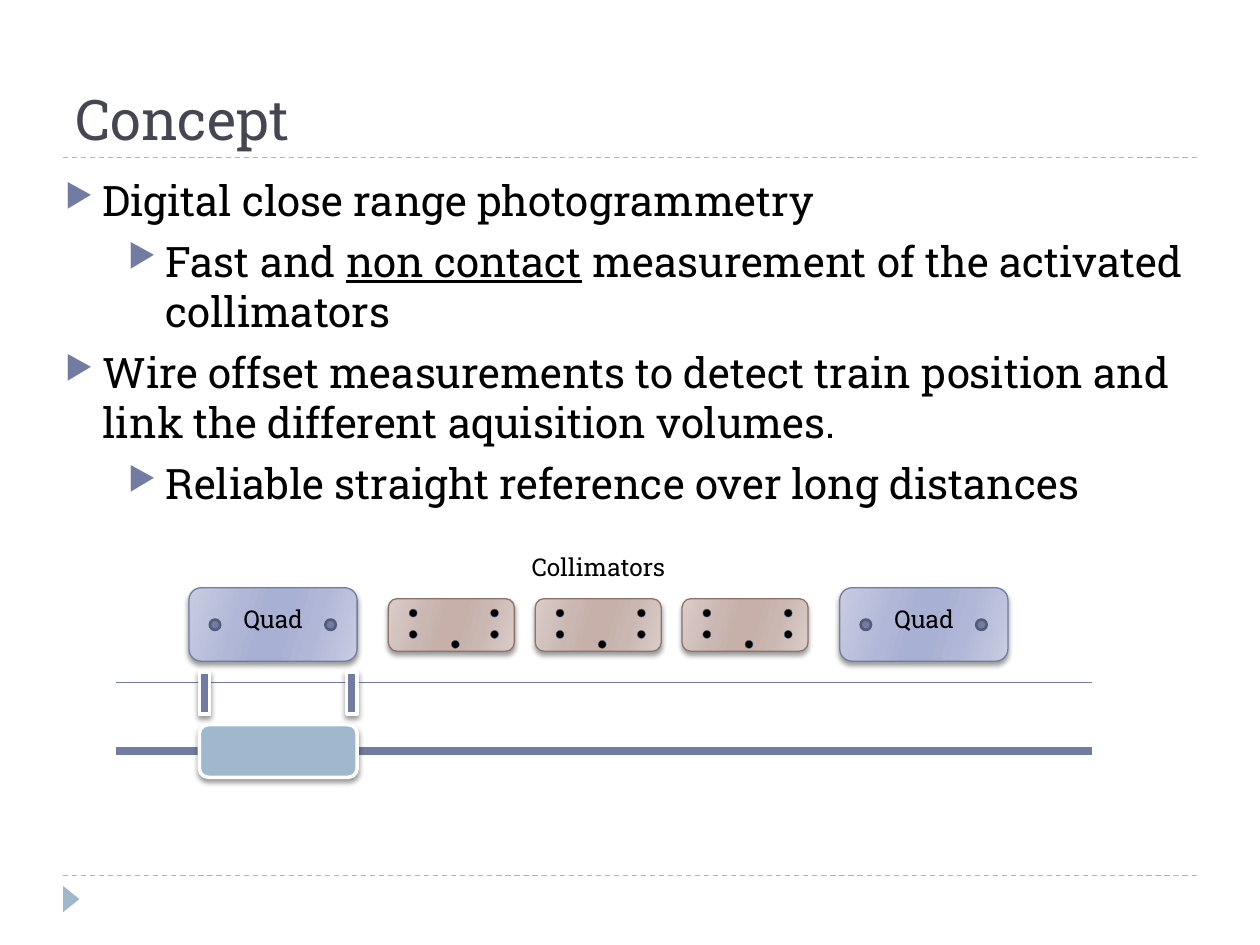
from dataclasses import dataclass

from lxml.etree import SubElement
from pptx import Presentation
from pptx.dml.color import RGBColor
from pptx.enum.dml import MSO_LINE as Dash
from pptx.enum.shapes import MSO_CONNECTOR as Link, MSO_SHAPE as Kind
from pptx.enum.text import MSO_ANCHOR as Anchor, PP_ALIGN as Align
from pptx.oxml.ns import qn
from pptx.util import Cm, Pt


@dataclass(frozen=True)
class Theme:
    font: str = "Roboto Slab"
    title: str = "464653"
    ink: str = "000000"
    blue: str = "727CA3"
    navy: str = "545C79"
    pale: str = "9FB8CD"
    white: str = "FFFFFF"
    brown: str = "8E736A"
    rose: tuple = ("DACDCA", "CBB7B2", "C6B0A9")
    lilac: tuple = ("C9CDE2", "B1B7D7", "A8B0D3")
    head: int = 32
    body: int = 24
    note: int = 14


T = Theme()
BODY = [
    (0, ["Digital close range photogrammetry"]),
    (1, ["Fast and ", "non contact", " measurement of the activated collimators"]),
    (0, ["Wire offset measurements to detect train position and "
         "link the different aquisition volumes."]),
    (1, ["Reliable straight reference over long distances"]),
]


def rgb(code):
    return RGBColor.from_string(code)


def node(parent, tag, **attrs):
    return SubElement(parent, qn(tag), {k: str(v) for k, v in attrs.items()})


def blend(fill, tones):
    fill.gradient()
    fill.gradient_angle = -16
    stops = fill._fill._gradFill.find(qn("a:gsLst"))
    for old in list(stops):
        stops.remove(old)
    edge, mid, core = tones
    for spot, tone in zip((0, 30, 45, 55, 73, 100), (edge, mid, core, core, mid, edge)):
        node(node(stops, "a:gs", pos=spot * 1000), "a:srgbClr", val=tone)


def shade(shape):
    glow = node(shape._element.spPr.find(qn("a:effectLst")), "a:outerShdw",
                blurRad=Pt(3), dist=Pt(2), dir=5400000, rotWithShape=0)
    node(node(glow, "a:srgbClr", val=T.ink), "a:alpha", val=40000)


def add_form(shapes, kind, box, fill, line=None, width=0.75, raised=False):
    shape = shapes.add_shape(kind, *map(Cm, box))
    shape.shadow.inherit = False
    if isinstance(fill, tuple):
        blend(shape.fill, fill)
    else:
        shape.fill.solid()
        shape.fill.fore_color.rgb = rgb(fill)
    if line:
        shape.line.color.rgb = rgb(line)
        shape.line.width = Pt(width)
    else:
        shape.line.fill.background()
    if raised:
        shade(shape)
    return shape


def add_line(shapes, left, right, y, color, width, dash=None):
    line = shapes.add_connector(Link.STRAIGHT, Cm(left), Cm(y), Cm(right), Cm(y))
    line.line.color.rgb = rgb(color)
    line.line.width = Pt(width)
    if dash:
        line.line.dash_style = dash
    node(line._element.spPr, "a:effectLst")


def style(para, size, color):
    para.font.name = T.font
    para.font.size = Pt(size)
    para.font.color.rgb = rgb(color)


def add_text(shapes, box, text, size, color=T.ink, align=Align.CENTER, anchor=Anchor.TOP):
    frame = shapes.add_textbox(*map(Cm, box)).text_frame
    frame.word_wrap = True
    frame.vertical_anchor = anchor
    para = frame.paragraphs[0]
    para.text = text
    para.alignment = align
    style(para, size, color)


def add_list(shapes, box, items):
    frame = shapes.add_textbox(*map(Cm, box)).text_frame
    frame.word_wrap = True
    for i, (level, parts) in enumerate(items):
        para = frame.add_paragraph() if i else frame.paragraphs[0]
        para.level = level
        para.space_before = Pt(6)
        props = para._p.get_or_add_pPr()
        props.set("marL", str(Cm(0.76 + 1.27 * level)))
        props.set("indent", str(-Cm(0.76)))
        node(node(props, "a:buClr"), "a:srgbClr", val=T.blue)
        node(props, "a:buSzPct", val=76000)
        node(props, "a:buChar", char="▶")
        style(para, T.body, T.ink)
        for j, part in enumerate(parts):
            run = para.add_run()
            run.text = part
            if j == 1:
                run.font.underline = True


def add_dots(shapes, x, y, spots, size, fill, width):
    for dx, dy in spots:
        add_form(shapes, Kind.OVAL, (x + dx, y + dy, size, size), fill, T.navy, width)


def add_block(shapes, x, y):
    add_form(shapes, Kind.ROUNDED_RECTANGLE, (x, y, 2.54, 1.06), T.rose, T.brown, raised=True)
    spots = [(dx, dy) for dy in (0.21, 0.64) for dx in (0.42, 2.06)] + [(1.27, 0.84)]
    add_dots(shapes, x, y, spots, 0.16, T.ink, 0.25)


def add_quad(shapes, x, y):
    add_form(shapes, Kind.ROUNDED_RECTANGLE, (x, y, 3.39, 1.48), T.lilac, T.blue, raised=True)
    add_dots(shapes, x, y, [(0.42, 0.64), (2.75, 0.64)], 0.21, T.blue, 1.5)
    add_text(shapes, (x + 0.64, y + 0.21, 2.12, 0.86), "Quad", T.note)


def add_train(shapes):
    add_form(shapes, Kind.ROUNDED_RECTANGLE, (4.02, 14.61, 3.18, 1.06),
             T.pale, T.white, 2, True)
    for x in (6.99, 4.02):
        add_form(shapes, Kind.RECTANGLE, (x, 13.55, 0.21, 0.85), T.blue, T.white, 2, True)


def main():
    deck = Presentation()
    deck.slide_width, deck.slide_height = Cm(25.4), Cm(19.05)
    shapes = deck.slides.add_slide(deck.slide_layouts[6]).shapes
    for y in (17.65, 3.18):
        add_line(shapes, 1.27, 24.13, y, T.pale, 0.75, Dash.DASH)
    mark = add_form(shapes, Kind.ISOSCELES_TRIANGLE, (1.17, 17.96, 0.53, 0.33), T.pale)
    mark.rotation = 90
    add_text(shapes, (1.27, 0.64, 22.86, 2.54), "Concept", T.head, T.title,
             Align.LEFT, Anchor.BOTTOM)
    for y, width in ((15.14, 4.25), (13.76, 0.5)):
        add_line(shapes, 2.33, 22.01, y, T.blue, width)
    add_train(shapes.add_group_shape().shapes)
    line_up = shapes.add_group_shape().shapes
    for i in range(3):
        add_block(line_up, 7.83 + 2.96 * i, 12.07)
    for x in (16.93, 3.81):
        add_quad(line_up, x, 11.85)
    add_text(line_up, (10.16, 11, 3.81, 0.86), "Collimators", T.note)
    add_list(shapes, (1.06, 3.39, 23.07, 6.99), BODY)
    deck.save("out.pptx")


if __name__ == "__main__":
    main()
